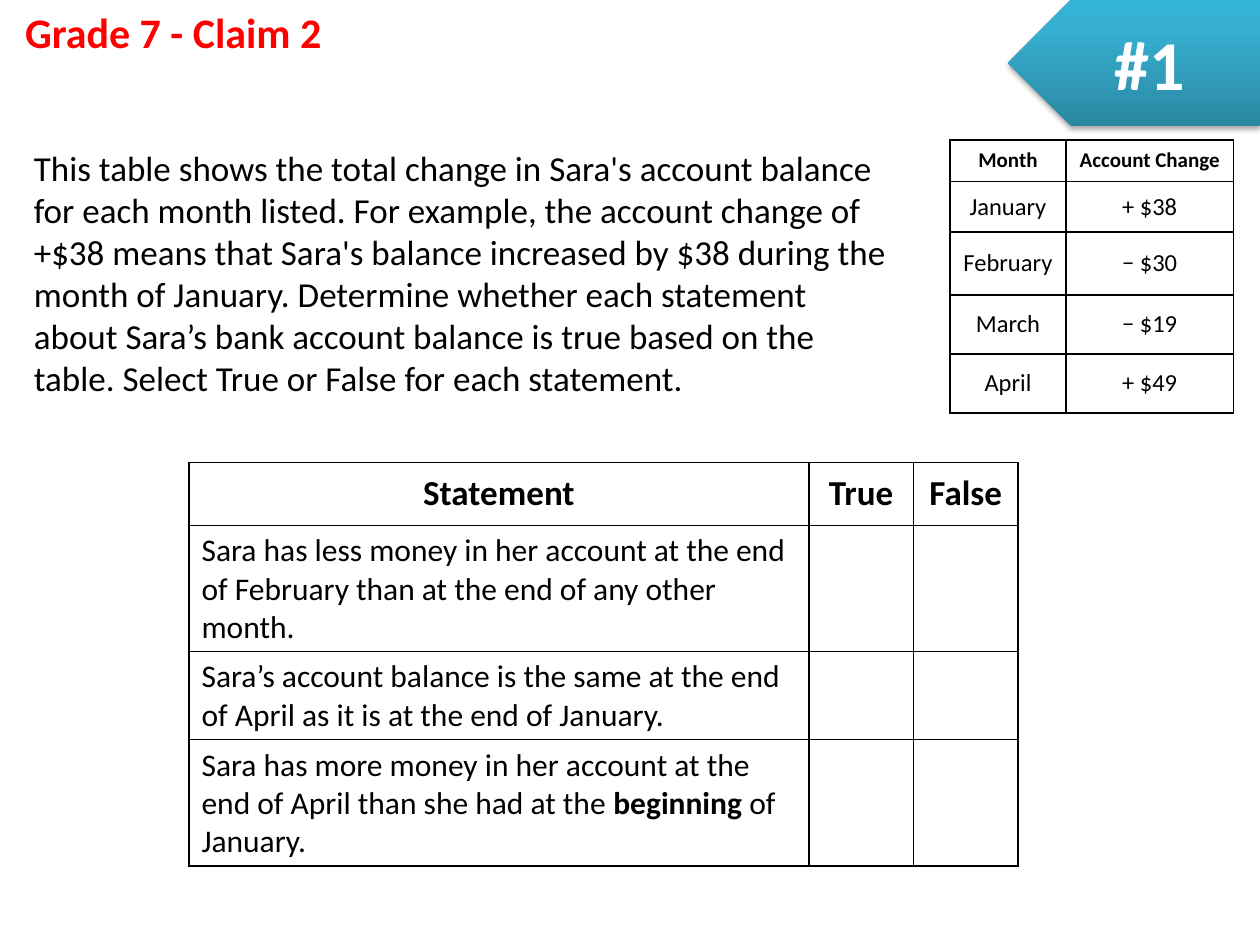
from lxml import etree
from pptx import Presentation
from pptx.dml.color import RGBColor
from pptx.enum.shapes import MSO_SHAPE
from pptx.enum.text import MSO_ANCHOR, PP_ALIGN
from pptx.oxml import parse_xml
from pptx.oxml.ns import nsdecls, qn
from pptx.util import Inches, Pt

CENTER = PP_ALIGN.CENTER
LEFT = PP_ALIGN.LEFT
MIDDLE = MSO_ANCHOR.MIDDLE
PENTAGON = MSO_SHAPE.PENTAGON
FONT = "Calibri"
BLACK = "000000"

INTRO = [
    "This table shows the total change in Sara's account balance for each month listed. "
    "For example, the account change of",
    "+$38 means that Sara's balance increased by $38 during the",
    "month of January. Determine whether each statement about Sara’s bank account balance "
    "is true based on the table. Select True or False for each statement.",
]
ACCOUNT_CHANGES = [
    ["Month", "Account Change"],
    ["January", "+ $38"],
    ["February", "− $30"],
    ["March", "− $19"],
    ["April", "+ $49"],
]
STATEMENTS = [
    ["Statement", "True", "False"],
    ["Sara has less money in her account at the end of February than at the end of any "
     "other month.", "", ""],
    ["Sara’s account balance is the same at the end of April as it is at the end of "
     "January.", "", ""],
    ["Sara has more money in her account at the end of April than she had at the ", "", ""],
]


def color(value):
    """Turn a hex string into a colour."""
    return RGBColor.from_string(value)


def style_run(run, size, hex_color=BLACK, bold=False):
    """Set the font of one run."""
    run.font.name = FONT
    run.font.size = Pt(size)
    run.font.bold = bold
    run.font.color.rgb = color(hex_color)


def write(text_frame, paragraphs, size, hex_color=BLACK, bold=False, align=LEFT):
    """Fill a text frame with evenly styled paragraphs."""
    text_frame.text = "\n".join(paragraphs)
    for paragraph in text_frame.paragraphs:
        paragraph.alignment = align
        for run in paragraph.runs:
            style_run(run, size, hex_color, bold)


def add_text(slide, box, paragraphs, size, **style):
    """Add a wrapping text box."""
    text_frame = slide.shapes.add_textbox(*map(Inches, box)).text_frame
    text_frame.word_wrap = True
    write(text_frame, paragraphs, size, **style)


def add_borders(cell):
    """Draw a thin black line on all sides of a cell."""
    properties = cell._tc.get_or_add_tcPr()
    for position, side in enumerate(("lnL", "lnR", "lnT", "lnB")):
        line = etree.Element(qn(f"a:{side}"), w=str(Pt(1)))
        fill = etree.SubElement(line, qn("a:solidFill"))
        etree.SubElement(fill, qn("a:srgbClr"), val=BLACK)
        properties.insert(position, line)


def add_grid(slide, left, top, widths, heights, rows, header_size, body_size, body_align):
    """Add a bordered table with a bold centred header row."""
    table = slide.shapes.add_table(
        len(rows), len(widths), Inches(left), Inches(top),
        Inches(sum(widths)), Inches(sum(heights))).table
    table.horz_banding = False
    for column, width in zip(table.columns, widths):
        column.width = Inches(width)
    for row_index, (row, height) in enumerate(zip(rows, heights)):
        header = row_index == 0
        table.rows[row_index].height = Inches(height)
        for column_index, words in enumerate(row):
            cell = table.cell(row_index, column_index)
            cell.vertical_anchor = MIDDLE
            cell.fill.background()
            add_borders(cell)
            write(cell.text_frame, [words], header_size if header else body_size,
                  bold=header, align=CENTER if header else body_align)
    return table


def add_number_tag(slide, box, label):
    """Add the left-pointing gradient tag with the problem number."""
    tag = slide.shapes.add_shape(PENTAGON, *map(Inches, box))
    properties = tag._element.spPr
    properties.find(qn("a:xfrm")).set("flipH", "1")
    stops = "".join(
        f'<a:gs pos="{position * 1000}"><a:srgbClr val="{value}"/></a:gs>'
        for position, value in ((0, "2A88A2"), (80, "37B1D2"), (100, "34B4D6")))
    properties.append(parse_xml(
        f'<a:gradFill {nsdecls("a")} rotWithShape="1"><a:gsLst>{stops}</a:gsLst>'
        '<a:lin ang="16200000" scaled="0"/></a:gradFill>'))
    tag.line.fill.background()
    properties.append(parse_xml(
        f'<a:effectLst {nsdecls("a")}><a:outerShdw blurRad="{Pt(3.1)}" dist="{Pt(1.8)}" '
        f'dir="5400000" rotWithShape="0"><a:srgbClr val="{BLACK}">'
        '<a:alpha val="35000"/></a:srgbClr></a:outerShdw></a:effectLst>'))
    tag.text_frame.vertical_anchor = MIDDLE
    write(tag.text_frame, [label], 40, hex_color="FFFFFF", bold=True, align=CENTER)


def main():
    """Build the slide and save it."""
    presentation = Presentation()
    presentation.slide_width = Inches(10)
    presentation.slide_height = Inches(7.5)
    slide = presentation.slides.add_slide(presentation.slide_layouts[6])

    add_text(slide, (0, 0, 2.75, 0.5), ["Grade 7 - Claim 2"], 24,
             hex_color="FF0000", bold=True, align=CENTER)
    add_text(slide, (0.17, 1.11, 7.05, 2.17), INTRO, 20)
    statements = add_grid(slide, 1.5, 3.67, [4.92, 0.83, 0.83], [0.5, 0.9, 0.5, 0.9],
                          STATEMENTS, 20, 18, LEFT)
    last_statement = statements.cell(3, 0).text_frame.paragraphs[0]
    for words, bold in (("beginning ", True), ("of January.", False)):
        run = last_statement.add_run()
        run.text = words
        style_run(run, 18, bold=bold)
    add_grid(slide, 7.54, 1.11, [0.92, 1.33], [0.33, 0.4, 0.5, 0.47, 0.47],
             ACCOUNT_CHANGES, 12, 14, CENTER)
    add_number_tag(slide, (8, 0, 2, 1), "#1")

    presentation.save("out.pptx")


if __name__ == "__main__":
    main()
